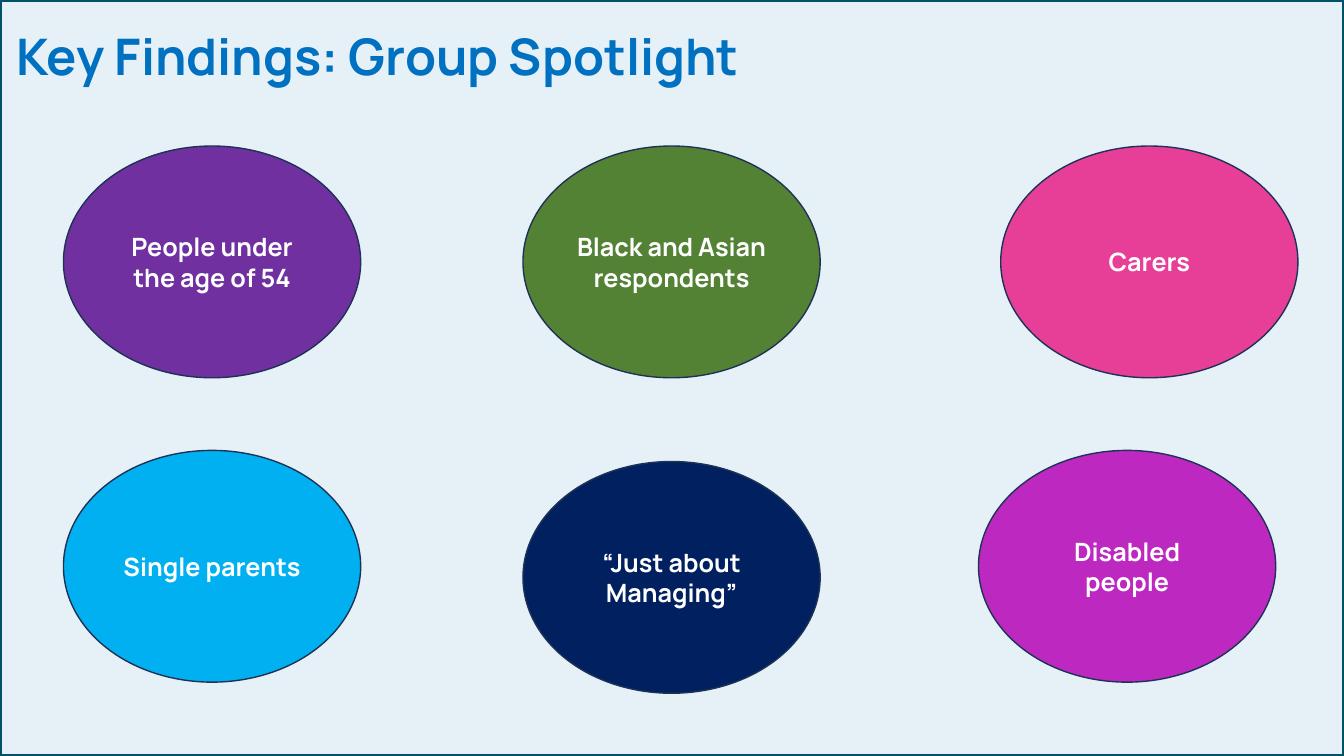
import pptx
import pptx.dml.color
import pptx.enum.shapes
import pptx.enum.text
import pptx.util
from pptx.util import Cm, Pt

FONT = "Manrope"
COLOURS = {
    "background": "E6F1F7",
    "frame": "004F6B",
    "title": "0070C0",
    "outline": "1E3256",
    "label": "FFFFFF",
    "purple": "7030A0",
    "green": "548235",
    "pink": "E73E97",
    "sky": "00B0F0",
    "navy": "002060",
    "magenta": "BC28C0",
}
SLIDE_WIDTH, SLIDE_HEIGHT = Cm(33.87), Cm(19.05)
GROUP_WIDTH, GROUP_HEIGHT = Cm(7.49), Cm(5.84)
LEFT, MIDDLE, RIGHT = Cm(1.6), Cm(13.18), Cm(25.22)
TOP, BOTTOM = Cm(3.68), Cm(11.35)

# Label, fill, left, top
GROUPS = [
    ("People under the age of 54", "purple", LEFT, TOP),
    ("Black and Asian respondents", "green", MIDDLE, TOP),
    ("Carers", "pink", RIGHT, TOP),
    ("Single parents", "sky", LEFT, BOTTOM),
    ("“Just about Managing”", "navy", MIDDLE, BOTTOM + Cm(0.28)),
    ("Disabled people", "magenta", RIGHT - Cm(0.56), BOTTOM),
]


def colour(name):
    return pptx.dml.color.RGBColor.from_string(COLOURS[name])


def write(frame, text, size, colour_name, alignment):
    """Put one bold run in the first paragraph of a text frame."""
    paragraph = frame.paragraphs[0]
    paragraph.alignment = alignment
    run = paragraph.add_run()
    run.text = text
    run.font.name = FONT
    run.font.size = Pt(size)
    run.font.bold = True
    run.font.color.rgb = colour(colour_name)


def add_frame(slide, left, top, width, height):
    border = slide.shapes.add_shape(
        pptx.enum.shapes.MSO_SHAPE.RECTANGLE, left, top, width, height)
    border.shadow.inherit = False
    border.fill.background()
    border.line.color.rgb = colour("frame")
    border.line.width = Pt(3)


def place_title(slide, left, top, width, height):
    heading = slide.shapes.title
    heading.left, heading.top = left, top
    heading.width, heading.height = width, height
    frame = heading.text_frame
    frame.margin_left = frame.margin_right = Cm(0.41)
    frame.margin_top = frame.margin_bottom = Cm(0.3)
    frame.word_wrap = True
    frame.auto_size = pptx.enum.text.MSO_AUTO_SIZE.SHAPE_TO_FIT_TEXT
    frame.vertical_anchor = pptx.enum.text.MSO_ANCHOR.TOP
    write(frame, "Key Findings: Group Spotlight", 36, "title",
          pptx.enum.text.PP_ALIGN.LEFT)


def add_group(slide, label, fill, left, top, width, height):
    group = slide.shapes.add_shape(
        pptx.enum.shapes.MSO_SHAPE.OVAL, left, top, width, height)
    group.shadow.inherit = False
    group.fill.solid()
    group.fill.fore_color.rgb = colour(fill)
    group.line.color.rgb = colour("outline")
    group.line.width = Pt(1)
    frame = group.text_frame
    frame.word_wrap = True
    frame.vertical_anchor = pptx.enum.text.MSO_ANCHOR.MIDDLE
    write(frame, label, 18, "label", pptx.enum.text.PP_ALIGN.CENTER)


def add_spotlight_slide(deck):
    slide = deck.slides.add_slide(deck.slide_layouts.get_by_name("Title Only"))
    slide.background.fill.solid()
    slide.background.fill.fore_color.rgb = colour("background")
    add_frame(slide, 0, 0, SLIDE_WIDTH, SLIDE_HEIGHT)
    place_title(slide, 0, Cm(0.33), Cm(24.61), Cm(2.13))
    for label, fill, left, top in GROUPS:
        add_group(slide, label, fill, left, top, GROUP_WIDTH, GROUP_HEIGHT)


def main():
    deck = pptx.Presentation()
    deck.slide_width, deck.slide_height = SLIDE_WIDTH, SLIDE_HEIGHT
    add_spotlight_slide(deck)
    deck.save("out.pptx")


if __name__ == "__main__":
    main()
